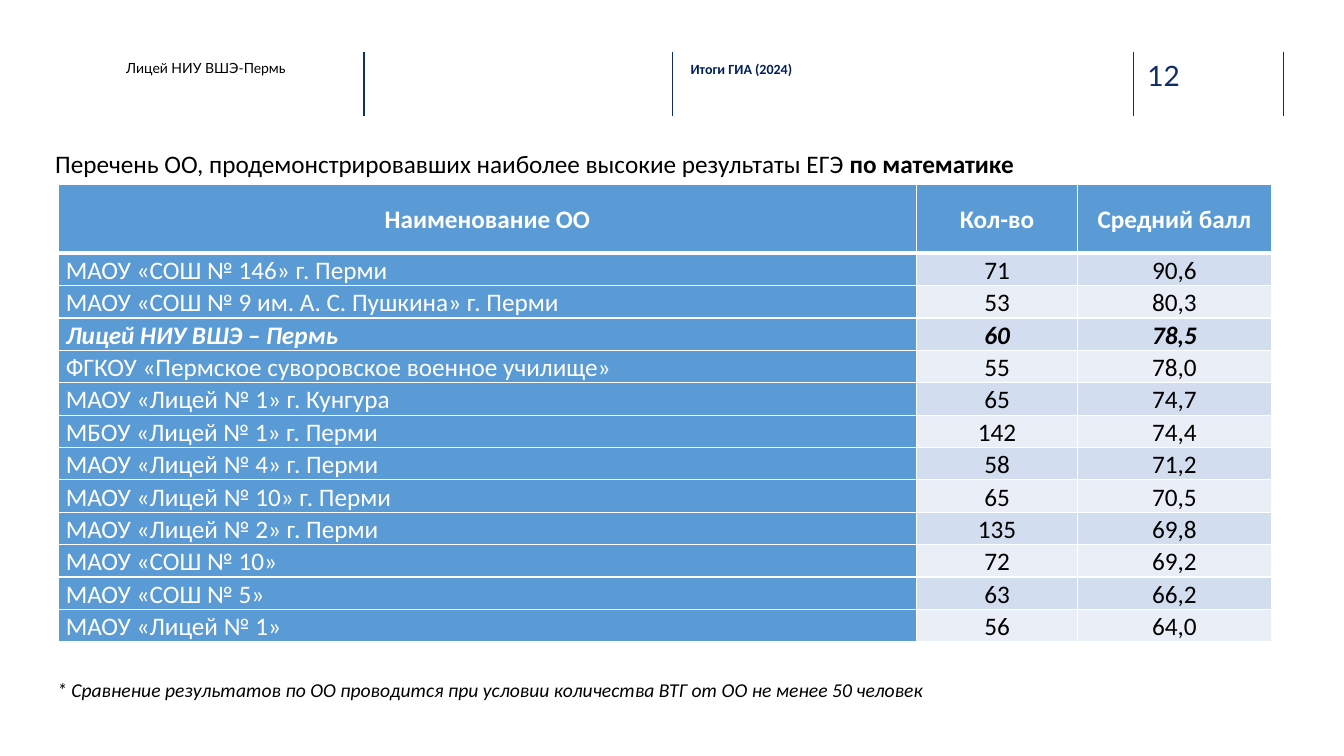
import pptx
import pptx.dml.color
import pptx.enum.shapes
import pptx.enum.text
import pptx.oxml.ns
import pptx.util
from lxml import etree

Cm = pptx.util.Cm
Pt = pptx.util.Pt
qn = pptx.oxml.ns.qn
PP_ALIGN = pptx.enum.text.PP_ALIGN

COLORS = {
    "navy": "102D69",
    "heading": "001F5F",
    "black": "000000",
    "white": "FFFFFF",
    "blue": "5B9BD5",
    "band_dark": "D2DEEF",
    "band_light": "EAEFF7",
}


def rgb(name):
    return pptx.dml.color.RGBColor.from_string(COLORS[name])


def style_run(r, size, color, font="Calibri", bold=False, italic=False):
    r.font.size = Pt(size)
    r.font.name = font
    r.font.color.rgb = rgb(color)
    r.font.bold = bold
    r.font.italic = italic


prs = pptx.Presentation()
prs.slide_width = Cm(33.86)
prs.slide_height = Cm(19.05)
s = prs.slides.add_slide(prs.slide_layouts[6])

# Header dividers
for x in (9.17, 16.94, 28.55, 32.33):
    line = s.shapes.add_connector(
        pptx.enum.shapes.MSO_CONNECTOR.STRAIGHT, Cm(x), Cm(1.3), Cm(x), Cm(2.92))
    line.line.color.rgb = rgb("navy")
    line.line.width = Pt(1)
    etree.SubElement(line._element.spPr, qn("a:effectLst"))

# Header labels: text, left, top, width, height, size, font, colour, bold
header = [
    ("12", 28.91, 1.47, 1.85, 0.86, 20, "Lato", "navy", False),
    ("Лицей НИУ ВШЭ-Пермь", 3.18, 1.5, 5.28, 1.14, 10, "Lato", "black", False),
    ("Итоги ГИА (2024)", 17.4, 1.52, 5.74, 1.14, 10, "Calibri", "heading", True),
]
for text, x, y, w, h, size, font, color, bold in header:
    tf = s.shapes.add_textbox(Cm(x), Cm(y), Cm(w), Cm(h)).text_frame
    tf.word_wrap = True
    tf.margin_left = tf.margin_right = tf.margin_top = tf.margin_bottom = 0
    tf.text = text
    style_run(tf.paragraphs[0].runs[0], size, color, font, bold)

# Title
tf = s.shapes.add_textbox(Cm(1.14), Cm(3.61), Cm(29.95), Cm(1.02)).text_frame
tf.word_wrap = True
p = tf.paragraphs[0]
p.text = "Перечень ОО, продемонстрировавших наиболее высокие результаты ЕГЭ "
style_run(p.runs[0], 18, "black")
r = p.add_run()
r.text = "по математике"
style_run(r, 18, "black", bold=True)

# Footnote
tf = s.shapes.add_textbox(Cm(1.19), Cm(16.97), Cm(29.95), Cm(0.86)).text_frame
tf.word_wrap = True
tf.text = ("* Сравнение результатов по ОО проводится при условии "
           "количества ВТГ от ОО не менее 50 человек")
style_run(tf.paragraphs[0].runs[0], 14, "black", italic=True)

# Results table
lyceum = "Лицей НИУ ВШЭ – Пермь"
rows = [
    ("Наименование ОО", "Кол-во", "Средний балл"),
    ("МАОУ «СОШ № 146» г. Перми", "71", "90,6"),
    ("МАОУ «СОШ № 9 им. А. С. Пушкина» г. Перми", "53", "80,3"),
    (lyceum, "60", "78,5"),
    ("ФГКОУ «Пермское суворовское военное училище»", "55", "78,0"),
    ("МАОУ «Лицей № 1» г. Кунгура", "65", "74,7"),
    ("МБОУ «Лицей № 1» г. Перми", "142", "74,4"),
    ("МАОУ «Лицей № 4» г. Перми", "58", "71,2"),
    ("МАОУ «Лицей № 10» г. Перми", "65", "70,5"),
    ("МАОУ «Лицей № 2» г. Перми", "135", "69,8"),
    ("МАОУ «СОШ № 10»", "72", "69,2"),
    ("МАОУ «СОШ № 5»", "63", "66,2"),
    ("МАОУ «Лицей № 1»", "56", "64,0"),
]
table = s.shapes.add_table(
    len(rows), 3, Cm(1.47), Cm(4.65), Cm(30.56), Cm(11.45)).table
table.first_col = True
for column, width in zip(table.columns, (21.62, 4.06, 4.88)):
    column.width = Cm(width)

for i, row in enumerate(rows):
    is_header = i == 0
    is_lyceum = row[0] == lyceum
    table.rows[i].height = Cm(1.73 if is_header else 0.81)
    for j, text in enumerate(row):
        on_blue = is_header or j == 0
        cell = table.cell(i, j)
        cell.margin_left = cell.margin_right = Cm(0.19)
        cell.margin_top = cell.margin_bottom = 0
        cell.vertical_anchor = pptx.enum.text.MSO_ANCHOR.MIDDLE

        tcPr = cell._tc.get_or_add_tcPr()
        for side in ("L", "R", "T", "B"):
            thick = (i, side) in ((0, "B"), (1, "T"))
            ln = etree.SubElement(
                tcPr, qn(f"a:ln{side}"), w=str(Pt(3 if thick else 1)))
            fill = etree.SubElement(ln, qn("a:solidFill"))
            etree.SubElement(fill, qn("a:srgbClr"), val=COLORS["white"])

        band = "band_dark" if i % 2 else "band_light"
        cell.fill.solid()
        cell.fill.fore_color.rgb = rgb("blue" if on_blue else band)

        p = cell.text_frame.paragraphs[0]
        p.text = text
        p.line_spacing = 1.07
        p.alignment = PP_ALIGN.CENTER if is_header or j else PP_ALIGN.LEFT
        style_run(p.runs[0], 18, "white" if on_blue else "black",
                  bold=is_header or is_lyceum, italic=is_lyceum)

prs.save("out.pptx")
